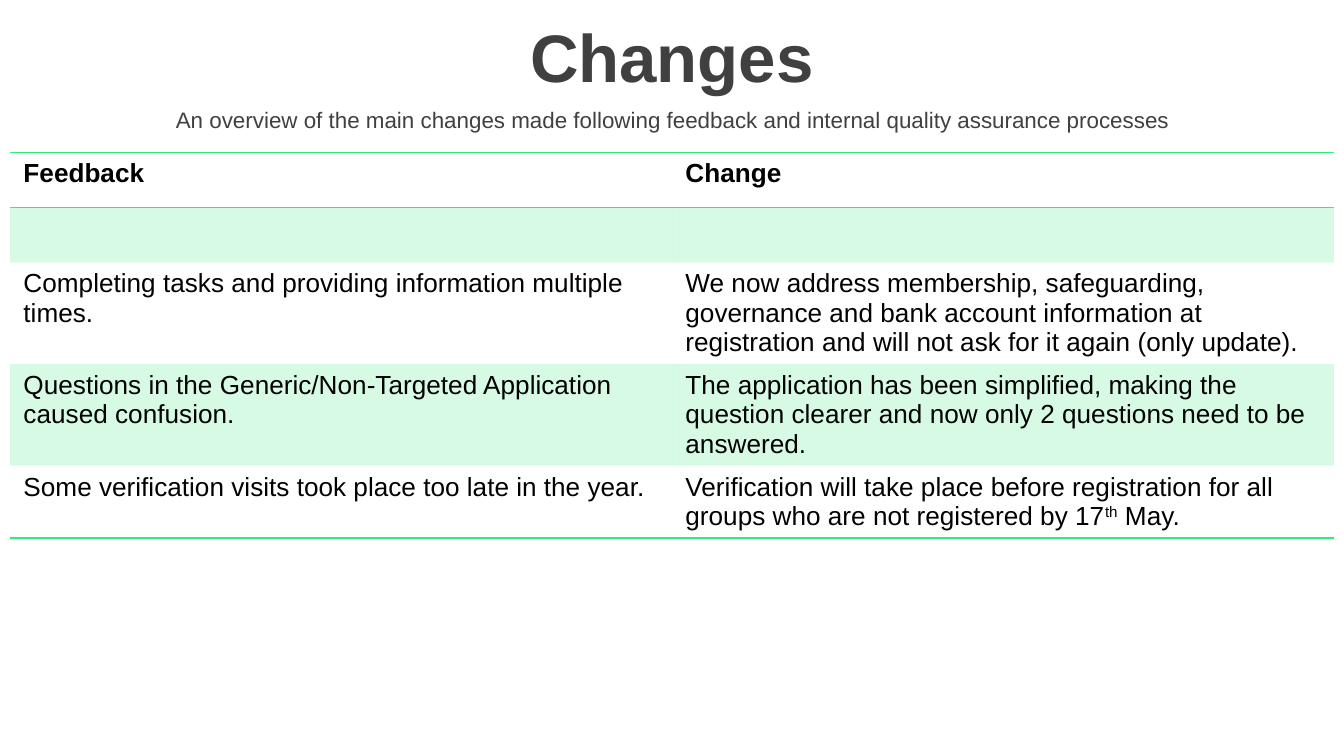
from lxml import etree
from pptx import Presentation
from pptx.dml.color import RGBColor
from pptx.enum.text import MSO_ANCHOR, MSO_AUTO_SIZE, PP_ALIGN
from pptx.oxml.ns import qn
from pptx.util import Cm, Pt

FONT = "Arial"
COLOURS = {"heading": "404040", "text": "000000", "accent": "33E97C"}
NO_STYLE = "{2D5ABB26-0587-4C30-8999-92F81FD0307C}"
BAND_OPACITY = 20
ORDINAL = "17th"

ROWS = [
    ("Feedback", "Change"),
    ("", ""),
    ("Completing tasks and providing information multiple times.",
     "We now address membership, safeguarding, governance and bank account "
     "information at registration and will not ask for it again (only update)."),
    ("Questions in the Generic/Non-Targeted Application caused confusion.",
     "The application has been simplified, making the question clearer and "
     "now only 2 questions need to be answered."),
    ("Some verification visits took place too late in the year.",
     "Verification will take place before registration for all groups who are "
     "not registered by 17th May."),
]


def style_font(font, size, colour, bold=False):
    font.name, font.size, font.bold = FONT, Pt(size), bold
    font.color.rgb = RGBColor.from_string(COLOURS[colour])


def place_heading(heading, text, box, size, bold=False):
    """Fill a title or text box with one centred line."""
    heading.left, heading.top, heading.width, heading.height = box
    frame = heading.text_frame
    frame.word_wrap = True
    frame.auto_size = MSO_AUTO_SIZE.NONE
    frame.vertical_anchor = MSO_ANCHOR.MIDDLE
    frame.text = text
    line = frame.paragraphs[0]
    line.alignment = PP_ALIGN.CENTER
    style_font(line.runs[0].font, size, "heading", bold)


def add_rule(cell, side):
    """Draw an accent border on side "T" or "B" of a cell."""
    rule = etree.Element(qn(f"a:ln{side}"), w=str(Pt(1)))
    fill = etree.SubElement(rule, qn("a:solidFill"))
    etree.SubElement(fill, qn("a:srgbClr"), val=COLOURS["accent"])
    properties = cell._tc.get_or_add_tcPr()
    borders = [part for part in properties if part.tag == qn("a:lnT")]
    properties.insert(len(borders), rule)


def shade(cell, banded):
    if not banded:
        cell.fill.background()
        return
    cell.fill.solid()
    cell.fill.fore_color.rgb = RGBColor.from_string(COLOURS["accent"])
    colour = cell._tc.tcPr.find(f".//{qn('a:srgbClr')}")
    etree.SubElement(colour, qn("a:alpha"), val=str(BAND_OPACITY * 1000))


def write_cell(cell, text, bold):
    """Write the text, raising the letters of the ordinal date."""
    if not text:
        return
    before, ordinal, after = text.partition(ORDINAL)
    paragraph = cell.text_frame.paragraphs[0]
    paragraph.text = before + ordinal[:-2]
    if ordinal:
        suffix = paragraph.add_run()
        suffix.text = ordinal[-2:]
        suffix.font._element.set("baseline", "30000")
        paragraph.add_run().text = after
    for run in paragraph.runs:
        style_font(run.font, 14, "text", bold)


def add_changes_table(slide, left, top, width, row_height):
    table = slide.shapes.add_table(
        len(ROWS), 2, left, top, width, row_height * len(ROWS)).table
    table.horz_banding = False
    table._tbl.tblPr.find(qn("a:tableStyleId")).text = NO_STYLE
    for row_index, texts in enumerate(ROWS):
        for column_index, text in enumerate(texts):
            cell = table.cell(row_index, column_index)
            is_header = row_index == 0
            write_cell(cell, text, bold=is_header)
            shade(cell, banded=row_index % 2 == 1)
            if is_header:
                add_rule(cell, "T")
            if is_header or row_index == len(ROWS) - 1:
                add_rule(cell, "B")


def build_changes_slide(presentation):
    slide = presentation.slides.add_slide(presentation.slide_layouts[5])
    width = presentation.slide_width
    place_heading(slide.shapes.title, "Changes",
                  (0, Cm(0.15), width, Cm(1.8)), 36, bold=True)
    subtitle_box = (0, Cm(1.95), width, Cm(0.62))
    subtitle = slide.shapes.add_textbox(*subtitle_box)
    place_heading(subtitle,
                  "An overview of the main changes made following feedback "
                  "and internal quality assurance processes", subtitle_box, 12)
    subtitle.text_frame.margin_left = Cm(0.3)
    add_changes_table(slide, Cm(0.19), Cm(2.88), Cm(25.02), Cm(1.04))


def main():
    presentation = Presentation()
    presentation.slide_width, presentation.slide_height = Cm(25.4), Cm(14.29)
    build_changes_slide(presentation)
    presentation.save("out.pptx")


if __name__ == "__main__":
    main()
